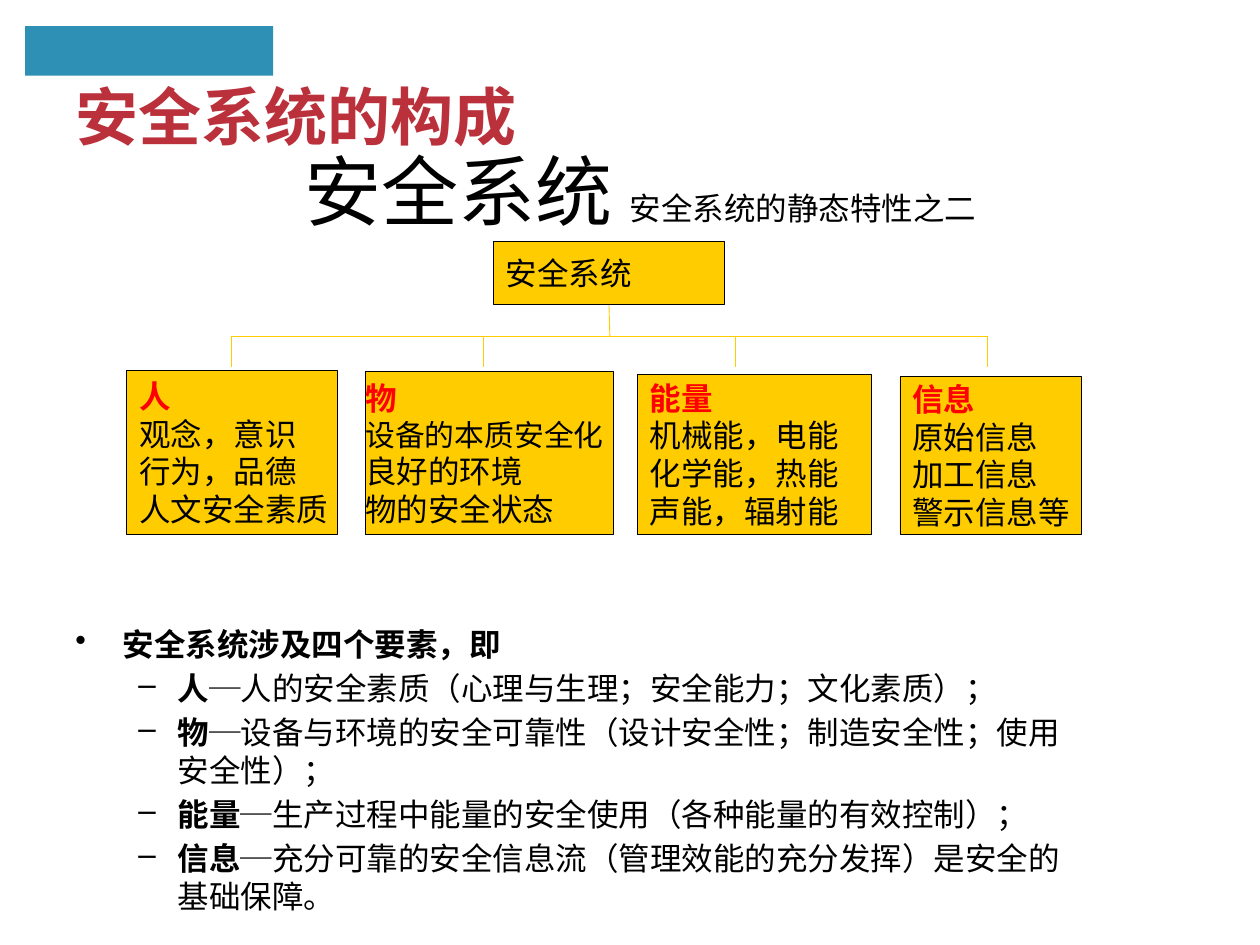
from dataclasses import dataclass

from lxml import etree
from pptx import Presentation
from pptx.dml.color import RGBColor
from pptx.enum.shapes import MSO_CONNECTOR, MSO_SHAPE
from pptx.enum.text import MSO_ANCHOR, PP_ALIGN
from pptx.oxml.ns import qn
from pptx.util import Pt

RECT = MSO_SHAPE.RECTANGLE
STRAIGHT = MSO_CONNECTOR.STRAIGHT
MIDDLE = MSO_ANCHOR.MIDDLE
LEFT, CENTER = PP_ALIGN.LEFT, PP_ALIGN.CENTER


@dataclass(frozen=True)
class Theme:
    font: str = "Noto Sans CJK SC"
    banner: RGBColor = RGBColor(0x2F, 0x90, 0xB5)
    heading: RGBColor = RGBColor(0xBA, 0x31, 0x3B)
    box: RGBColor = RGBColor(0xFF, 0xCC, 0x00)
    accent: RGBColor = RGBColor(0xFF, 0x00, 0x00)
    text: RGBColor = RGBColor(0x00, 0x00, 0x00)
    heading_size: int = 36
    title_size: int = 44
    body_size: int = 18
    tight_size: int = 17


theme = Theme()


def add_run(p, text, size=theme.body_size, color=theme.text, bold=False):
    """Add a run whose Latin and East Asian fonts are both the theme font."""
    r = p.add_run()
    r.text = text
    r.font.size = Pt(size)
    r.font.bold = bold
    r.font.color.rgb = color
    r.font.name = theme.font
    ea = etree.Element(qn("a:ea"), typeface=theme.font)
    r.font._element.find(qn("a:latin")).addnext(ea)


def add_box(x, y, w, h):
    """Add a yellow box and return its text frame."""
    sp = s.shapes.add_shape(RECT, Pt(x), Pt(y), Pt(w), Pt(h))
    sp.shadow.inherit = False
    sp.fill.solid()
    sp.fill.fore_color.rgb = theme.box
    sp.line.color.rgb = theme.text
    sp.line.width = Pt(0.5)
    tf = sp.text_frame
    tf.word_wrap = False
    tf.vertical_anchor = MIDDLE
    return tf


prs = Presentation()
prs.slide_width, prs.slide_height = Pt(720), Pt(540)
s = prs.slides.add_slide(prs.slide_layouts[6])

# Banner
banner = s.shapes.add_shape(RECT, Pt(14.4), Pt(15), Pt(141.8), Pt(28.2))
banner.shadow.inherit = False
banner.fill.solid()
banner.fill.fore_color.rgb = theme.banner
banner.line.fill.background()

# Title and heading
title = s.shapes.add_textbox(Pt(41.8), Pt(87.8), Pt(648), Pt(41))
heading = s.shapes.add_textbox(Pt(36), Pt(38.2), Pt(648), Pt(55.4))
for sp in (title, heading):
    sp.text_frame.word_wrap = True
    sp.text_frame.vertical_anchor = MIDDLE
p = title.text_frame.paragraphs[0]
p.alignment = CENTER
add_run(p, "安全系统 ", theme.title_size)
add_run(p, "安全系统的静态特性之二")
add_run(heading.text_frame.paragraphs[0], "安全系统的构成",
        theme.heading_size, theme.heading, True)

# Tree lines: one trunk, one bar, four evenly spaced drops
bar_y, drop_y = 192, 210
drops = [132.5 + 144 * i for i in range(4)]
tree_lines = [(348, 174, 348.5, bar_y), (drops[0], bar_y, drops[-1], bar_y)]
tree_lines += [(x, bar_y, x, drop_y) for x in drops]
for x1, y1, x2, y2 in tree_lines:
    line = s.shapes.add_connector(STRAIGHT, Pt(x1), Pt(y1), Pt(x2), Pt(y2))
    line.line.color.rgb = theme.box
    line.line.width = Pt(0.5)
    etree.SubElement(line._element.spPr, qn("a:effectLst"))

# Root box
p = add_box(282, 138, 132, 36).paragraphs[0]
p.alignment = LEFT
add_run(p, "安全系统")

# Element boxes: left, top, width, left inset, name, details
box_bottom = 305.4
elements = [
    (72.4, 211.7, 120.6, 7.2, "人", ["观念，意识", "行为，品德", "人文安全素质"]),
    (208.8, 212.4, 142, 0, "物", ["设备的本质安全化", "良好的环境", "物的安全状态"]),
    (364.3, 213.8, 133.7, 7.2, "能量", ["机械能，电能", "化学能，热能", "声能，辐射能"]),
    (514.3, 215, 103.7, 7.2, "信息", ["原始信息", "加工信息", "警示信息等"]),
]
for x, y, w, inset, name, details in elements:
    tf = add_box(x, y, w, box_bottom - y)
    tf.margin_left = Pt(inset)
    p = tf.paragraphs[0]
    p.alignment = LEFT
    add_run(p, name, color=theme.accent, bold=True)
    for detail in details:
        p = tf.add_paragraph()
        p.alignment = LEFT
        tight = detail == "设备的本质安全化"
        add_run(p, detail, theme.tight_size if tight else theme.body_size)

# Explanation: level, bold part, plain part
points = [
    (0, "安全系统涉及四个要素，即", ""),
    (1, "人", "─人的安全素质（心理与生理；安全能力；文化素质）；"),
    (1, "物", "─设备与环境的安全可靠性（设计安全性；制造安全性；使用安全性）；"),
    (1, "能量", "─生产过程中能量的安全使用（各种能量的有效控制）；"),
    (1, "信息", "─充分可靠的安全信息流（管理效能的充分发挥）是安全的基础保障。"),
]
bullets = [("•", 27, -27), ("–", 58.5, -22.5)]
body = s.shapes.add_textbox(Pt(36), Pt(353.5), Pt(590.4), Pt(126))
tf = body.text_frame
tf.word_wrap = True
for i, (level, term, meaning) in enumerate(points):
    p = tf.add_paragraph() if i else tf.paragraphs[0]
    mark, margin, indent = bullets[level]
    p.level = level
    if i:
        p.space_before = Pt(3.6)
    pPr = p._p.get_or_add_pPr()
    pPr.set("marL", str(Pt(margin)))
    pPr.set("indent", str(Pt(indent)))
    etree.SubElement(pPr, qn("a:buChar"), char=mark)
    add_run(p, term, bold=True)
    if meaning:
        add_run(p, meaning)

prs.save("out.pptx")
